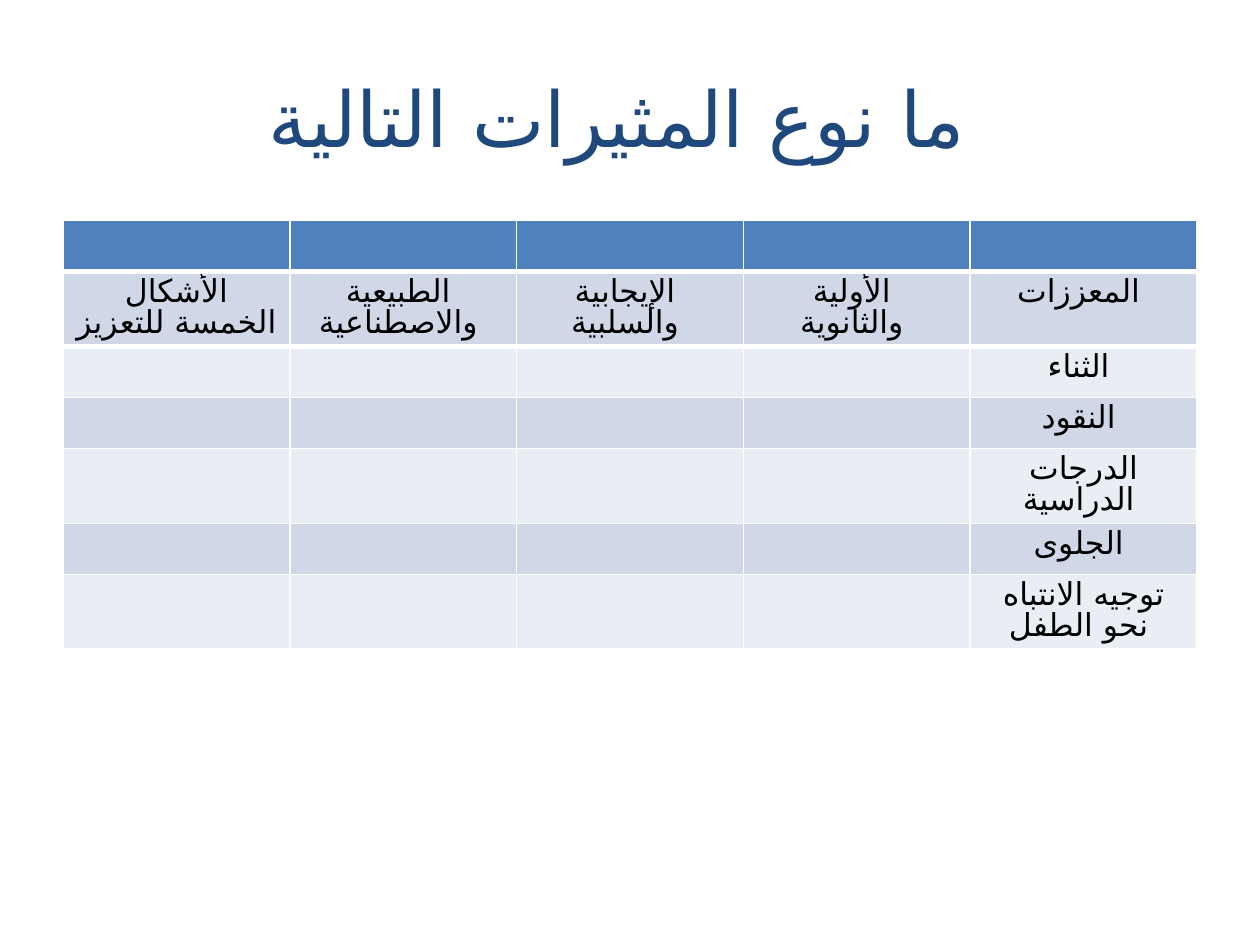
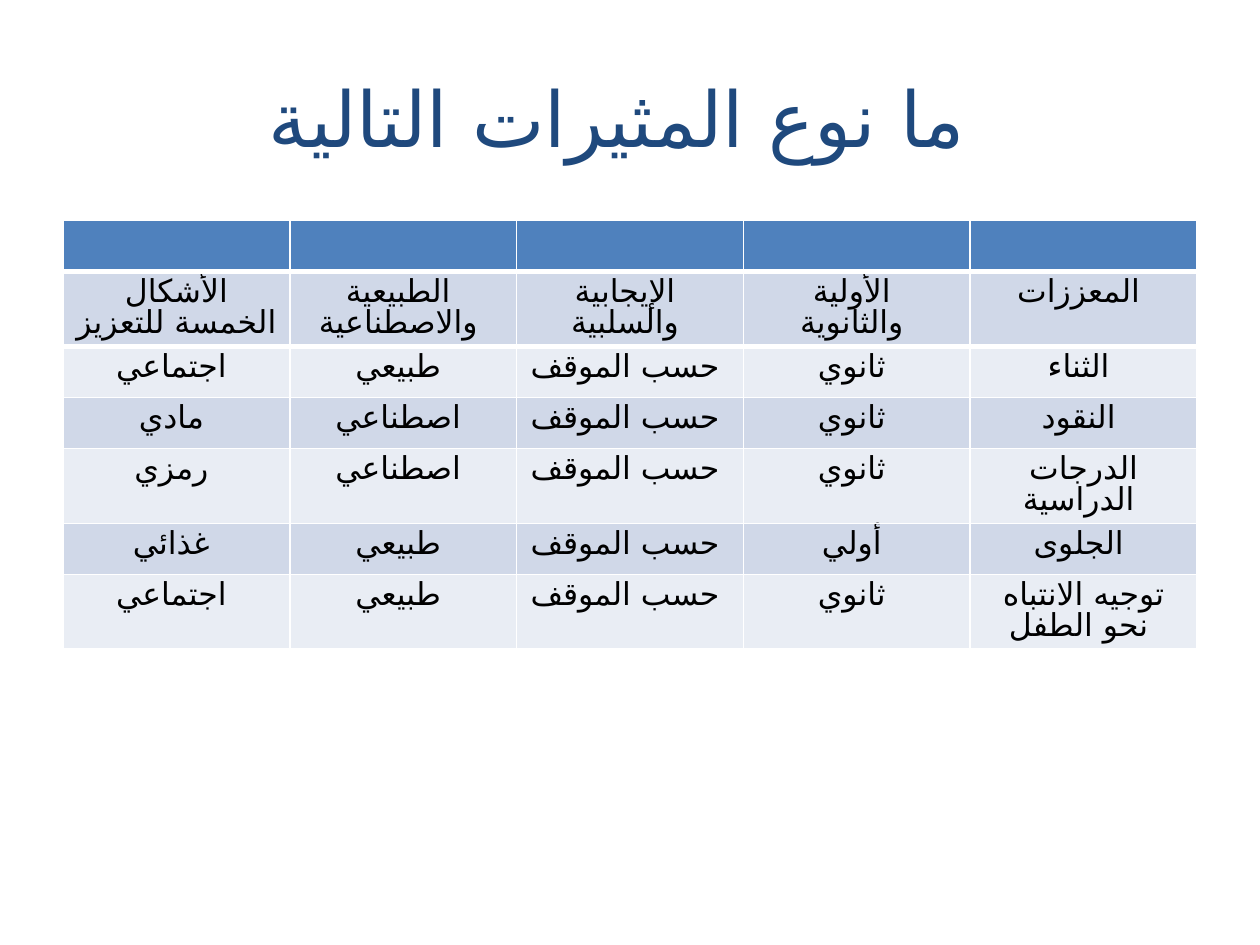
"""Build two Arabic slides: a reinforcer exercise and its answers."""
from dataclasses import dataclass

from lxml.etree import Element, SubElement
from pptx import Presentation
from pptx.dml.color import RGBColor as RGB
from pptx.enum.text import MSO_ANCHOR as Anchor, PP_ALIGN as Align
from pptx.oxml.ns import qn
from pptx.util import Pt

TITLE = "ما نوع المثيرات التالية"
HEADS = [
    "الأشكال الخمسة للتعزيز",
    "الطبيعية\nوالاصطناعية",
    "الإيجابية\nوالسلبية",
    "الأولية\nوالثانوية",
    "المعززات",
]
ITEMS = ["الثناء", "النقود", "الدرجات الدراسية", "الجلوى", "توجيه الانتباه نحو الطفل"]
BLANK = [[""] * 4 for item in ITEMS]
KEY = [
    ["اجتماعي", "طبيعي", "حسب الموقف", "ثانوي"],
    ["مادي", "اصطناعي", "حسب الموقف", "ثانوي"],
    ["رمزي", "اصطناعي", "حسب الموقف", "ثانوي"],
    ["غذائي", "طبيعي", "حسب الموقف", "أولي"],
    ["اجتماعي", "طبيعي", "حسب الموقف", "ثانوي"],
]


@dataclass(frozen=True)
class Theme:
    font: str = "Calibri"
    arab: str = "DejaVu Sans"
    navy: str = "1F497D"
    ink: str = "000000"
    rule: str = "FFFFFF"
    head: str = "4F81BD"
    bands: tuple = ("D0D8E8", "E9EDF4")
    big: int = 44
    body: int = 18


LOOK = Theme()
LEFT, WIDTH = 36, 648
TOP, HIGH, ROW = 126, 247, 29.2


def write(frame, text, size=LOOK.body, color=LOOK.ink, space=None):
    """Fill a text frame with centred lines."""
    for i, line in enumerate(text.split("\n")):
        para = frame.add_paragraph() if i else frame.paragraphs[0]
        para.alignment = Align.CENTER
        para.line_spacing = space
        run = para.add_run()
        run.text = f"{line} "
        run.font.name, run.font.size = LOOK.font, Pt(size)
        run.font.color.rgb = RGB.from_string(color)
        SubElement(run.font._element, qn("a:cs"), typeface=LOOK.arab)


def edge(cell, side):
    """Draw a thick rule on one side of a cell."""
    line = Element(qn(f"a:{side}"), w=str(Pt(3)))
    fill = SubElement(line, qn("a:solidFill"))
    SubElement(fill, qn("a:srgbClr"), val=LOOK.rule)
    cell._tc.get_or_add_tcPr().insert(0, line)


def add_grid(slide, rows):
    """Add the table, with a header row and banded rows below it."""
    count = len(rows[0])
    shape = slide.shapes.add_table(len(rows), count, Pt(LEFT), Pt(TOP), Pt(WIDTH), Pt(HIGH))
    grid = shape.table
    for col in grid.columns:
        col.width = Pt(WIDTH / count)
    for r, texts in enumerate(rows):
        grid.rows[r].height = Pt(ROW)
        shade = LOOK.bands[(r - 1) % 2] if r else LOOK.head
        for c, text in enumerate(texts):
            cell = grid.cell(r, c)
            cell.fill.solid()
            cell.fill.fore_color.rgb = RGB.from_string(shade)
            if r < 2:
                edge(cell, "lnT" if r else "lnB")
            if text:
                write(cell.text_frame, text, space=0.85)
    shape.height = Pt(HIGH)


def add_page(deck, marks):
    """Add one slide with the title and the given answers."""
    slide = deck.slides.add_slide(deck.slide_layouts[5])
    title = slide.shapes.title
    title.left, title.top = Pt(LEFT), Pt(21.6)
    title.width, title.height = Pt(WIDTH), Pt(90)
    title.text_frame.vertical_anchor = Anchor.MIDDLE
    write(title.text_frame, TITLE, size=LOOK.big, color=LOOK.navy)
    body = [row + [item] for row, item in zip(marks, ITEMS)]
    add_grid(slide, [[""] * len(HEADS), HEADS, *body])


def main():
    """Build and save the deck."""
    deck = Presentation()
    deck.slide_width, deck.slide_height = Pt(720), Pt(540)
    for marks in (BLANK, KEY):
        add_page(deck, marks)
    deck.save("out.pptx")


if __name__ == "__main__":
    main()
